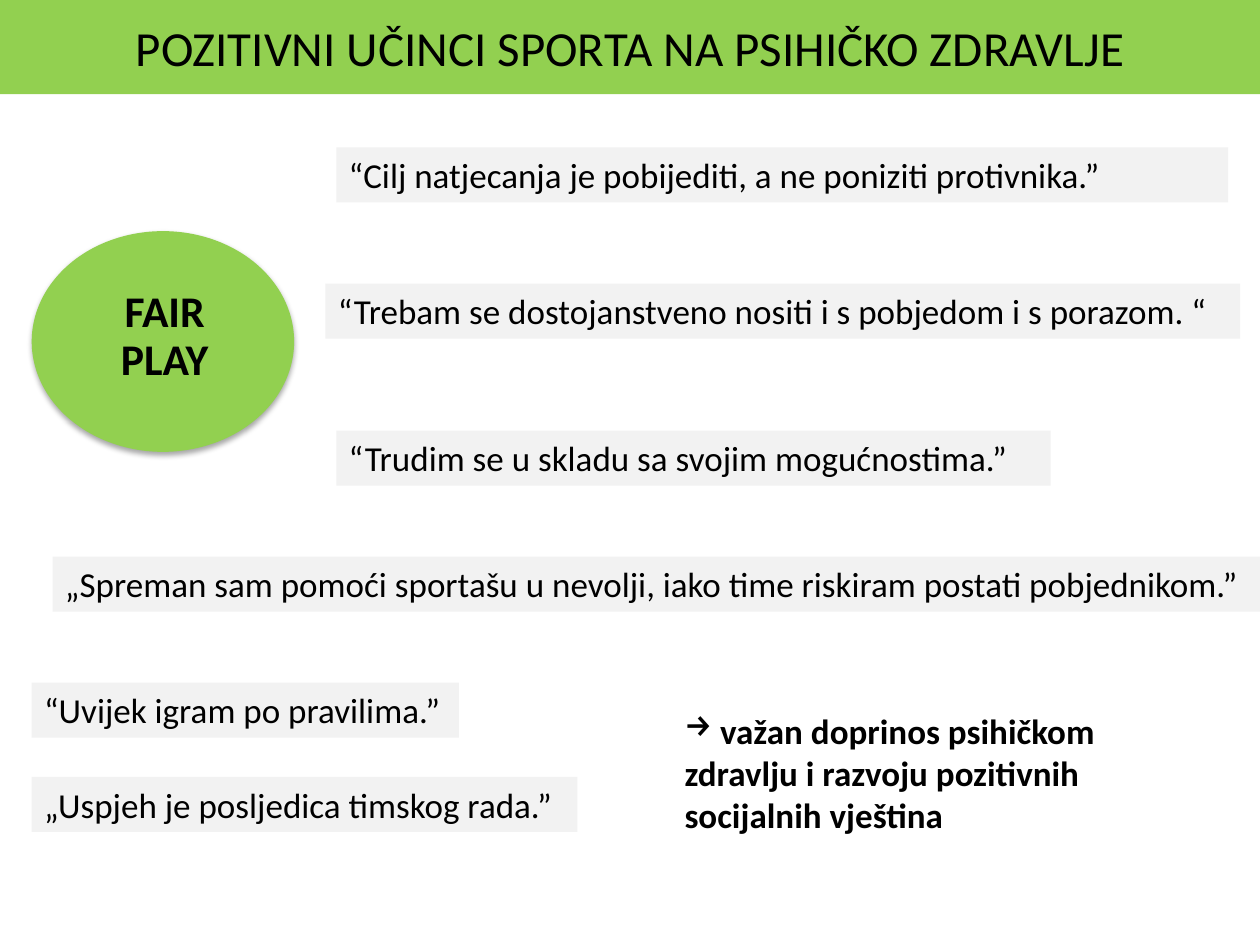
"""Build the fair play slide on sport and mental health."""
import lxml.etree
import pptx
import pptx.dml.color
import pptx.enum.shapes
import pptx.enum.text
import pptx.oxml
import pptx.oxml.ns
import pptx.util

Cm = pptx.util.Cm
PP_ALIGN = pptx.enum.text.PP_ALIGN
MSO_ANCHOR = pptx.enum.text.MSO_ANCHOR
MSO_AUTO_SIZE = pptx.enum.text.MSO_AUTO_SIZE

GREEN, GREY, BLACK = "92D050", "F2F2F2", "000000"
SHADOW = (
    '<a:effectLst xmlns:a="http://schemas.openxmlformats.org/drawingml/2006/main">'
    '<a:outerShdw blurRad="40000" dist="23000" dir="5400000" rotWithShape="0">'
    '<a:srgbClr val="000000"><a:alpha val="35000"/></a:srgbClr>'
    '</a:outerShdw></a:effectLst>'
)
QUOTES = [
    (6.78, 2.97, 17.98, True, "“Cilj natjecanja je pobijediti, a ne poniziti protivnika.”"),
    (6.56, 5.72, 18.44, True, "“Trebam se dostojanstveno nositi i s pobjedom i s porazom. “"),
    (6.78, 8.68, 14.4, True, "“Trudim se u skladu sa svojim mogućnostima.”"),
    (1.06, 11.22, 24.34, True,
     "„Spreman sam pomoći sportašu u nevolji, iako time riskiram postati pobjednikom.”"),
    (0.64, 13.76, 8.61, False, "“Uvijek igram po pravilima.”"),
    (0.64, 15.66, 11, True, "„Uspjeh je posljedica timskog rada.”"),
]


def rgb(value):
    return pptx.dml.color.RGBColor.from_string(value)


def fill(sp, color):
    sp.fill.solid()
    sp.fill.fore_color.rgb = rgb(color)


def write(sp, text, size=20, bold=False, align=PP_ALIGN.LEFT, anchor=MSO_ANCHOR.TOP,
          wrap=True, grow=False, inset=None, spacing=None, bullet=None):
    tf = sp.text_frame
    tf.word_wrap = wrap
    tf.auto_size = MSO_AUTO_SIZE.SHAPE_TO_FIT_TEXT if grow else MSO_AUTO_SIZE.NONE
    tf.vertical_anchor = anchor
    if inset is not None:
        tf.margin_left = tf.margin_right = tf.margin_top = tf.margin_bottom = Cm(inset)
    p = tf.paragraphs[0]
    p.alignment = align
    if spacing:
        p.line_spacing = spacing
    if bullet:
        pPr = p._p.get_or_add_pPr()
        lxml.etree.SubElement(pPr, pptx.oxml.ns.qn("a:buChar")).set("char", bullet)
    r = p.add_run()
    r.text = text
    r.font.name = "Calibri"
    r.font.size = pptx.util.Pt(size)
    r.font.bold = bold
    r.font.color.rgb = rgb(BLACK)


class Deck:
    def __init__(self):
        self.prs = pptx.Presentation()
        self.prs.slide_width, self.prs.slide_height = Cm(25.4), Cm(19.05)
        self.s = self.prs.slides.add_slide(self.prs.slide_layouts[5])

    def title(self, text, height):
        sp = self.s.shapes.title
        sp.left, sp.top = Cm(0), Cm(0)
        sp.width, sp.height = self.prs.slide_width, Cm(height)
        fill(sp, GREEN)
        write(sp, text, size=28, align=PP_ALIGN.CENTER, anchor=MSO_ANCHOR.MIDDLE)

    def text(self, x, y, w, h, text, color=None, **style):
        sp = self.s.shapes.add_textbox(Cm(x), Cm(y), Cm(w), Cm(h))
        if color:
            fill(sp, color)
        write(sp, text, **style)

    def ellipse(self, x, y, w, h):
        sp = self.s.shapes.add_shape(
            pptx.enum.shapes.MSO_SHAPE.OVAL, Cm(x), Cm(y), Cm(w), Cm(h))
        fill(sp, GREEN)
        sp.line.fill.background()
        sp._element.spPr.append(pptx.oxml.parse_xml(SHADOW))


def main():
    deck = Deck()
    deck.title("POZITIVNI UČINCI SPORTA NA PSIHIČKO ZDRAVLJE", 1.9)
    for x, y, w, wrap, quote in QUOTES:
        deck.text(x, y, w, 1.11, quote, color=GREY, wrap=wrap, grow=True)
    deck.ellipse(0.64, 4.66, 5.29, 4.45)
    deck.text(1.48, 5.5, 3.68, 2.6, "FAIR PLAY", size=25, bold=True, inset=0.08,
              align=PP_ALIGN.CENTER, anchor=MSO_ANCHOR.MIDDLE, spacing=0.9)
    deck.text(13.55, 14.18, 10.58, 2.82,
              " važan doprinos psihičkom zdravlju i razvoju pozitivnih socijalnih vještina",
              bold=True, grow=True, bullet="→")
    deck.prs.save("out.pptx")


if __name__ == "__main__":
    main()
